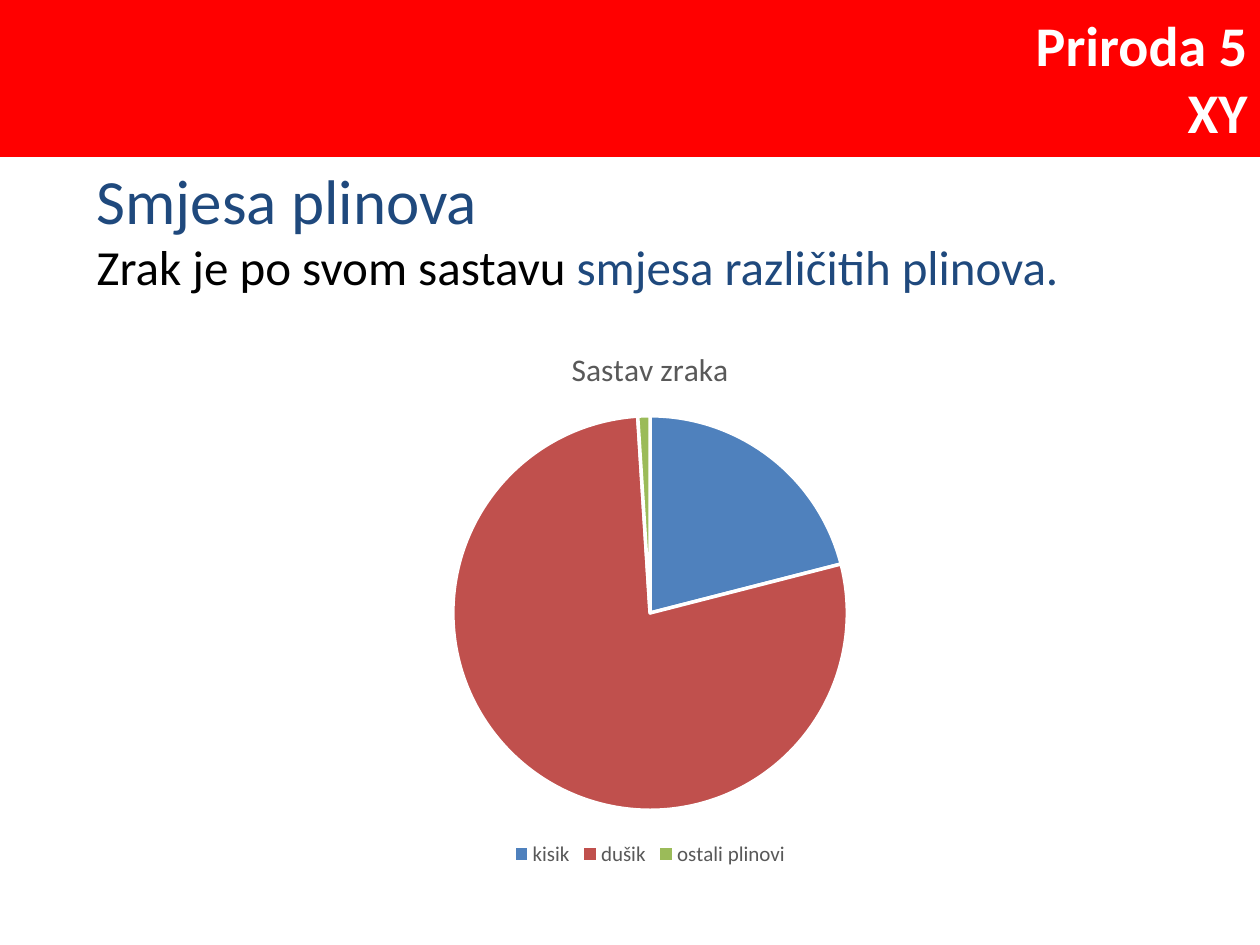
from pptx import Presentation
from pptx.chart.data import CategoryChartData
from pptx.dml.color import RGBColor
from pptx.enum.chart import XL_CHART_TYPE, XL_LEGEND_POSITION
from pptx.enum.shapes import MSO_SHAPE
from pptx.enum.text import MSO_ANCHOR, PP_ALIGN
from pptx.util import Pt

HUES = {
    "red": "FF0000", "white": "FFFFFF", "black": "000000",
    "navy": "1F497D", "gray": "595959",
    "kisik": "4F81BD", "dušik": "C0504D", "ostali plinovi": "9BBB59",
}


def tint(name):
    return RGBColor.from_string(HUES[name])


def style(font, size, hue, bold=False):
    font.name, font.size, font.bold = "Calibri", Pt(size), bold
    font.color.rgb = tint(hue)


def write(para, text, size=28, hue="black", bold=False, align=PP_ALIGN.LEFT):
    para.alignment = align
    run = para.add_run()
    run.text = text
    style(run.font, size, hue, bold)


class Deck:
    def __init__(self, wide, high):
        self.file = Presentation()
        self.file.slide_width, self.file.slide_height = Pt(wide), Pt(high)
        self.slide = self.file.slides.add_slide(self.file.slide_layouts[6])

    def fill(self, frame, lines):
        """Each line is a list of (text, format) pairs."""
        frame.word_wrap = True
        for i, line in enumerate(lines):
            para = frame.add_paragraph() if i else frame.paragraphs[0]
            for text, form in line:
                write(para, text, **form)

    def band(self, box, lines, hue):
        shape = self.slide.shapes.add_shape(MSO_SHAPE.RECTANGLE, *map(Pt, box))
        shape.shadow.inherit = False
        shape.fill.solid()
        shape.fill.fore_color.rgb = tint(hue)
        shape.line.color.rgb = tint(hue)
        shape.line.width = Pt(2)
        shape.text_frame.vertical_anchor = MSO_ANCHOR.MIDDLE
        self.fill(shape.text_frame, lines)

    def text(self, box, lines):
        shape = self.slide.shapes.add_textbox(*map(Pt, box))
        self.fill(shape.text_frame, lines)

    def pie(self, box, title, parts):
        data = CategoryChartData()
        data.categories = list(parts)
        data.add_series(title, list(parts.values()))
        chart = self.slide.shapes.add_chart(
            XL_CHART_TYPE.PIE, *map(Pt, box), data).chart
        style(chart.font, 10, "black")

        # Title and legend
        chart.has_title = True
        write(chart.chart_title.text_frame.paragraphs[0], title,
              size=18, hue="gray", align=PP_ALIGN.CENTER)
        chart.chart_title.include_in_layout = False
        chart.has_legend = True
        chart.legend.position = XL_LEGEND_POSITION.BOTTOM
        chart.legend.include_in_layout = False
        style(chart.legend.font, 12, "gray")

        # Slices
        plot = chart.plots[0]
        plot.vary_by_categories = True
        for i, name in enumerate(parts):
            look = plot.series[0].points[i].format
            look.fill.solid()
            look.fill.fore_color.rgb = tint(name)
            look.line.color.rgb = tint("white")
            look.line.width = Pt(2)


def main():
    deck = Deck(720, 540)

    # Header band
    head = dict(size=32, hue="white", bold=True, align=PP_ALIGN.RIGHT)
    deck.band((0, 0, 720, 88.5), [[("Priroda 5", head)], [("XY", head)]], "red")

    # Heading and statement
    deck.text((48.2, 88.5, 572.4, 85), [
        [("Smjesa plinova", dict(size=36, hue="navy"))],
        [("Zrak je po svom sastavu ", {}),
         ("smjesa različitih plinova.", dict(hue="navy"))],
    ])

    # Make-up of air
    deck.pie((150.5, 185, 442, 313.2), "Sastav zraka",
             {"kisik": 21, "dušik": 78, "ostali plinovi": 1})

    deck.file.save("out.pptx")


if __name__ == "__main__":
    main()
